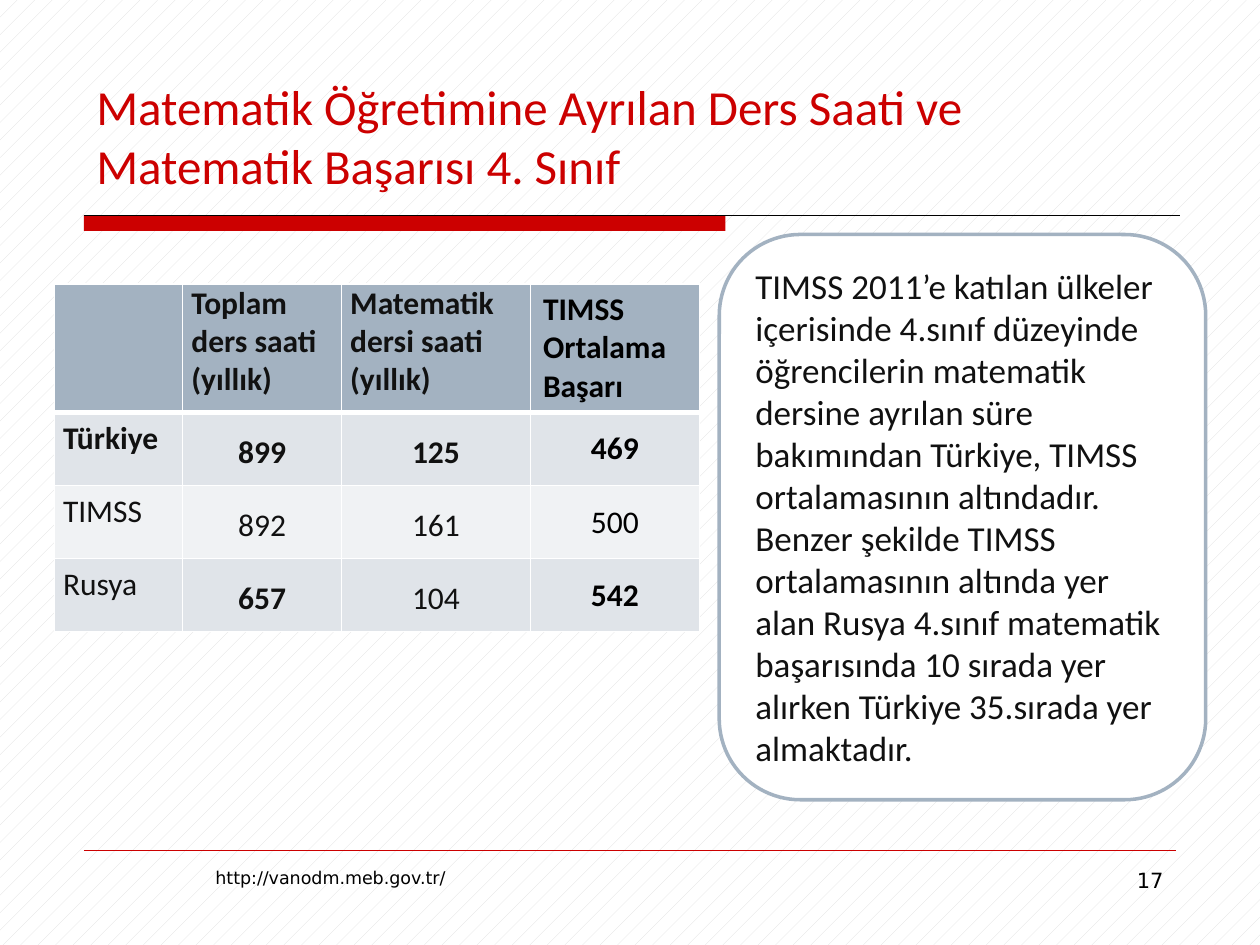
from dataclasses import dataclass

from lxml.etree import SubElement
from pptx import Presentation
from pptx.dml.color import RGBColor
from pptx.enum.dml import MSO_PATTERN
from pptx.enum.shapes import MSO_CONNECTOR, MSO_SHAPE
from pptx.enum.text import MSO_ANCHOR as Anchor, PP_ALIGN as Align
from pptx.oxml.ns import qn
from pptx.util import Pt


@dataclass(frozen=True)
class Theme:
    red: str = "CC0000"
    ink: str = "111111"
    black: str = "000000"
    white: str = "FFFFFF"
    hatch: str = "DDDDDD"
    slate: str = "A3B2C1"
    band_dark: str = "E0E4E9"
    band_light: str = "F0F2F4"
    body_font: str = "Calibri"
    footer_font: str = "DejaVu Sans"
    title_size: float = 28
    note_size: float = 20
    table_size: float = 18
    page_size: float = 12
    url_size: float = 10


THEME = Theme()
HEADERS = ["", "Toplam ders saati (yıllık)", "Matematik dersi saati (yıllık)",
           "TIMSS Ortalama Başarı"]
# Each row: its values, then the columns set in bold
ROWS = [
    (["Türkiye", "899", "125", "469"], {0, 1, 2, 3}),
    (["TIMSS", "892", "161", "500"], set()),
    (["Rusya", "657", "104", "542"], {1, 3}),
]
NOTE = ("TIMSS 2011’e katılan ülkeler içerisinde 4.sınıf düzeyinde öğrencilerin "
        "matematik dersine ayrılan süre bakımından Türkiye, TIMSS ortalamasının "
        "altındadır. Benzer şekilde TIMSS ortalamasının altında yer alan Rusya "
        "4.sınıf matematik başarısında 10 sırada yer alırken Türkiye 35.sırada "
        "yer almaktadır.")


def rgb(colour):
    return RGBColor.from_string(colour)


def write(frame, text, *, size, colour=THEME.black, font=THEME.body_font,
          bold=False, align=Align.LEFT, line_spacing=None, space_after=None):
    frame.word_wrap = True
    paragraph = frame.paragraphs[0]
    paragraph.alignment = align
    if line_spacing:
        paragraph.line_spacing = line_spacing
    if space_after:
        paragraph.space_after = Pt(space_after)
    run = paragraph.add_run()
    run.text = text
    run.font.name, run.font.size, run.font.bold = font, Pt(size), bold
    run.font.color.rgb = rgb(colour)


def add_text(slide, box, text, **style):
    frame = slide.shapes.add_textbox(*map(Pt, box)).text_frame
    frame.vertical_anchor = Anchor.TOP
    write(frame, text, **style)


def add_rule(slide, left, top, width, colour, weight):
    rule = slide.shapes.add_connector(MSO_CONNECTOR.STRAIGHT, Pt(left), Pt(top),
                                      Pt(left + width), Pt(top))
    rule.line.color.rgb, rule.line.width = rgb(colour), Pt(weight)
    SubElement(rule.element.spPr, qn("a:effectLst"))


def add_divider(slide, box):
    """Thin rule over the full width, with a thick bar at its left."""
    left, top, width, height = box
    bar = slide.shapes.add_shape(MSO_SHAPE.RECTANGLE, Pt(left), Pt(top),
                                 Pt(width * 0.585), Pt(height))
    bar.shadow.inherit = False
    bar.fill.solid()
    bar.fill.fore_color.rgb = rgb(THEME.red)
    bar.line.fill.background()
    add_rule(slide, left, top, width, THEME.black, 0.75)


def set_borders(cell, top, bottom):
    properties = cell._tc.get_or_add_tcPr()
    for side, weight in (("L", 1), ("R", 1), ("T", top), ("B", bottom)):
        border = SubElement(properties, qn(f"a:ln{side}"), w=str(Pt(weight)))
        fill = SubElement(border, qn("a:solidFill"))
        SubElement(fill, qn("a:srgbClr"), val=THEME.white)


def set_cell(cell, text, row, column, bold):
    header, last = row == 0, column == len(HEADERS) - 1
    set_borders(cell, top=3 if row == 1 else 1, bottom=3 if header else 1)
    band = THEME.band_dark if row % 2 else THEME.band_light
    cell.fill.solid()
    cell.fill.fore_color.rgb = rgb(THEME.slate if header else band)
    if not last:
        cell.margin_left = cell.margin_right = Pt(5)
        cell.margin_top, cell.margin_bottom = Pt(0 if header else 0.7), Pt(0)
    centred = not header and column > 0
    cell.vertical_anchor = Anchor.MIDDLE if centred else Anchor.TOP
    if text:
        spaced = not header and not last
        write(cell.text_frame, text, size=THEME.table_size, bold=bold,
              colour=THEME.black if last else THEME.ink,
              align=Align.CENTER if centred else Align.LEFT,
              line_spacing=1.15 if spaced else None,
              space_after=10 if spaced else None)


def add_hours_table(slide, box):
    left, top, width, height = box
    rows = [(HEADERS, set(range(len(HEADERS))))] + ROWS
    table = slide.shapes.add_table(len(rows), len(HEADERS),
                                   *map(Pt, box)).table
    shares = (1.02, 1.26, 1.5, 1.34)
    for column, share in zip(table.columns, shares):
        column.width = Pt(width * share / sum(shares))
    header_height = height * 0.37
    for index, row in enumerate(table.rows):
        row.height = Pt((height - header_height) / len(ROWS) if index
                        else header_height)
    for r, (values, bold_columns) in enumerate(rows):
        for c, value in enumerate(values):
            set_cell(table.cell(r, c), value, r, c, c in bold_columns)


def add_note(slide, box):
    panel = slide.shapes.add_shape(MSO_SHAPE.ROUNDED_RECTANGLE, *map(Pt, box))
    panel.shadow.inherit = False
    panel.fill.solid()
    panel.fill.fore_color.rgb = rgb(THEME.white)
    panel.line.color.rgb, panel.line.width = rgb(THEME.slate), Pt(2)
    panel.text_frame.vertical_anchor = Anchor.TOP
    write(panel.text_frame, NOTE, size=THEME.note_size, colour=THEME.ink)


def add_footer(slide, box):
    left, top, width, height = box
    add_rule(slide, left, top, width, THEME.red, 0.25)
    text_top, text_height = top + 6, height - 6
    add_text(slide, (left + 68, text_top, 358, text_height),
             "http://vanodm.meb.gov.tr/", size=THEME.url_size,
             font=THEME.footer_font)
    add_text(slide, (left + width - 156, text_top, 156, text_height), "17",
             size=THEME.page_size, font=THEME.footer_font, align=Align.RIGHT)


def main():
    deck = Presentation()
    deck.slide_width, deck.slide_height = Pt(720), Pt(540)
    slide = deck.slides.add_slide(deck.slide_layouts[6])

    # Hatched background
    background = slide.background.fill
    background.patterned()
    background.pattern = MSO_PATTERN.PERCENT_5
    background.fore_color.rgb = rgb(THEME.hatch)
    background.back_color.rgb = rgb(THEME.white)

    # Heading
    add_divider(slide, (48, 123, 626.5, 9))
    add_text(slide, (48, 40.3, 618, 75),
             "Matematik Öğretimine Ayrılan Ders Saati ve "
             "Matematik Başarısı 4. Sınıf",
             size=THEME.title_size, colour=THEME.red)

    # Content
    add_hours_table(slide, (31, 162.3, 368.6, 198.7))
    add_note(slide, (411, 134, 278, 323))

    # Footer
    add_footer(slide, (48, 486, 624, 43))
    deck.save("out.pptx")


if __name__ == "__main__":
    main()
